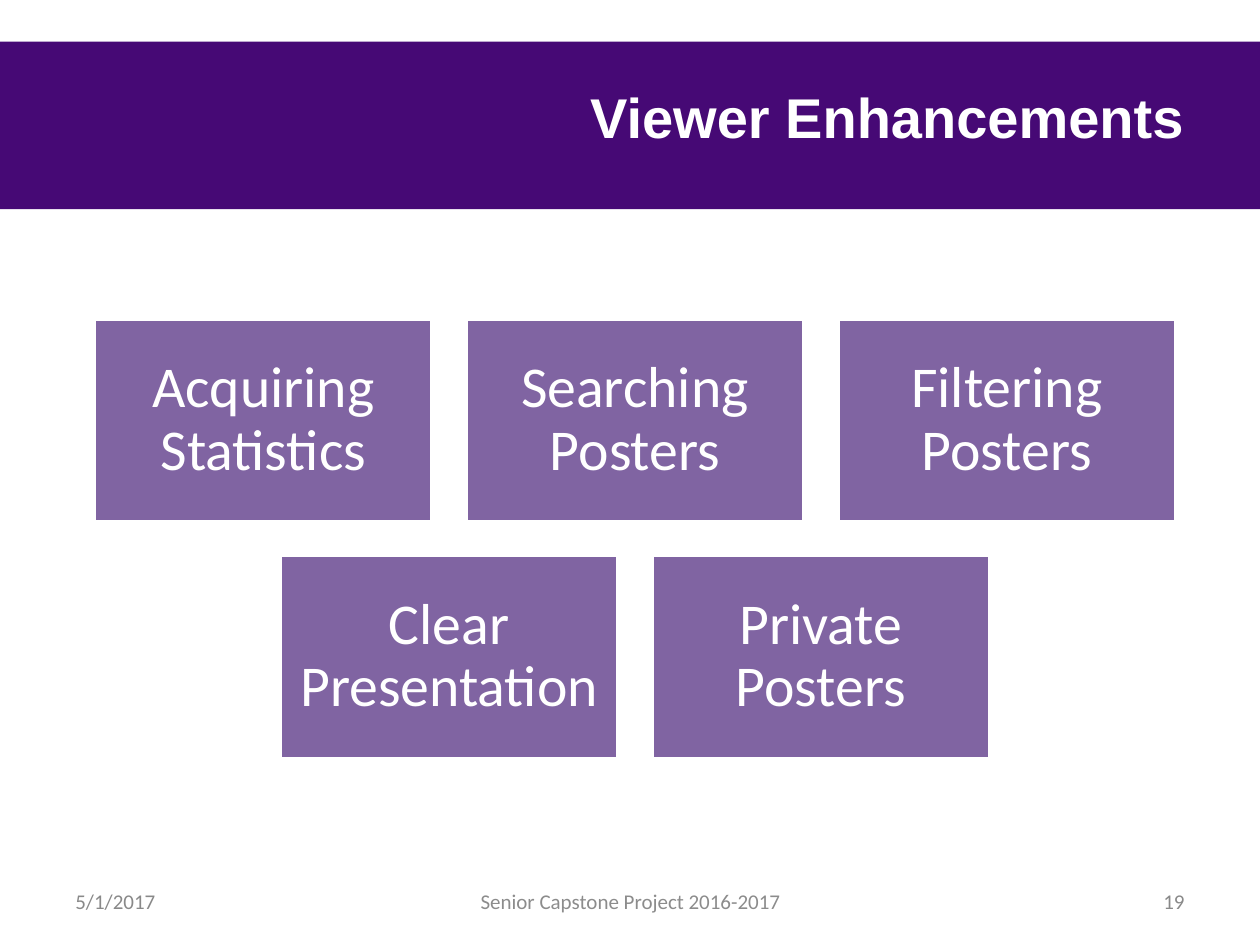
import pptx
import pptx.dml.color
import pptx.enum.shapes
import pptx.enum.text
import pptx.util

Inches = pptx.util.Inches
Pt = pptx.util.Pt
ALIGN = pptx.enum.text.PP_ALIGN
MIDDLE = pptx.enum.text.MSO_ANCHOR.MIDDLE

PURPLE, VIOLET, WHITE = "460975", "8064A2", "FFFFFF"
DATE_GREY, FOOTER_GREY = "898989", "8C8C8C"


def rgb(hex_text):
    return pptx.dml.color.RGBColor.from_string(hex_text)


class SlideBuilder:
    """Holds the style and the slide being filled."""

    body_font = "Calibri"
    title_font = "Arial"

    def __init__(self, slide):
        self.s = slide

    def set_text(self, sp, text, size, color, align, font=body_font, bold=False):
        tf = sp.text_frame
        tf.text = text
        tf.word_wrap = True
        tf.vertical_anchor = MIDDLE
        p = tf.paragraphs[0]
        p.alignment = align
        r = p.runs[0]
        r.font.name = font
        r.font.size = Pt(size)
        r.font.bold = bold
        r.font.color.rgb = rgb(color)
        return p

    def rectangle(self, x, y, w, h, fill):
        sp = self.s.shapes.add_shape(
            pptx.enum.shapes.MSO_SHAPE.RECTANGLE,
            Inches(x), Inches(y), Inches(w), Inches(h))
        sp.shadow.inherit = False
        sp.fill.solid()
        sp.fill.fore_color.rgb = rgb(fill)
        sp.line.fill.background()
        return sp

    def band(self, x, y, w, h):
        """Draw the title band behind everything else."""
        sp = self.rectangle(x, y, w, h, PURPLE)
        self.s.shapes._spTree.insert(2, sp._element)

    def title(self, text, x, y, w, h):
        sp = self.s.shapes.title
        sp.left, sp.top, sp.width, sp.height = map(Inches, (x, y, w, h))
        self.set_text(sp, text, 32, WHITE, ALIGN.RIGHT, self.title_font, True)

    def card(self, text, x, y, w, h):
        sp = self.rectangle(x, y, w, h, VIOLET)
        sp.line.color.rgb = rgb(WHITE)
        sp.line.width = Pt(2)
        tf = sp.text_frame
        tf.margin_left = tf.margin_right = Inches(0.14)
        tf.margin_top = tf.margin_bottom = Inches(0.14)
        p = self.set_text(sp, text, 33, WHITE, ALIGN.CENTER)
        p.line_spacing = 0.9

    def card_rows(self, rows, center, top, w, h, gap):
        """Centre each row of cards on the same vertical axis."""
        for i, row in enumerate(rows):
            left = center - (len(row) * (w + gap) - gap) / 2
            for j, text in enumerate(row):
                self.card(text, left + j * (w + gap), top + i * (h + gap), w, h)

    def footer(self, text, x, w, color, align):
        sp = self.s.shapes.add_textbox(
            Inches(x), Inches(6.95), Inches(w), Inches(0.4))
        self.set_text(sp, text, 12, color, align)


def main():
    prs = pptx.Presentation()
    prs.slide_width, prs.slide_height = Inches(10), Inches(7.5)
    title_only = prs.slide_layouts[5]
    b = SlideBuilder(prs.slides.add_slide(title_only))

    b.band(0, 0.33, 10, 1.33)
    b.title("Viewer Enhancements", 2.5, 0.3, 7, 1.25)
    b.card_rows(
        [["Acquiring Statistics", "Searching Posters", "Filtering Posters"],
         ["Clear Presentation", "Private Posters"]],
        center=5.04, top=2.53, w=2.68, h=1.61, gap=0.27)
    b.footer("19", 7.17, 2.33, DATE_GREY, ALIGN.RIGHT)
    b.footer("5/1/2017", 0.5, 2.33, DATE_GREY, ALIGN.LEFT)
    b.footer("Senior Capstone Project 2016-2017", 3.42, 3.17,
             FOOTER_GREY, ALIGN.CENTER)

    prs.save("out.pptx")


if __name__ == "__main__":
    main()
